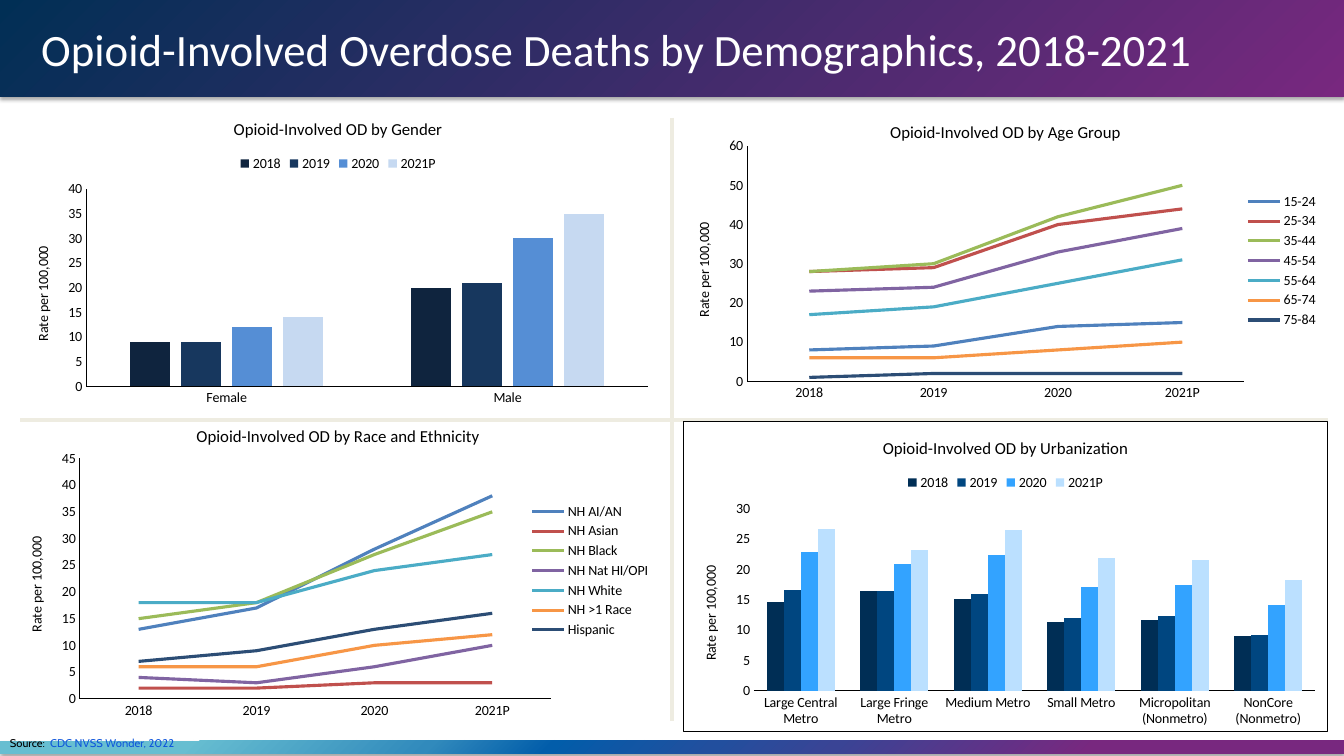
from pptx import Presentation
from pptx.chart.data import CategoryChartData
from pptx.dml.color import RGBColor
from pptx.enum.chart import XL_CHART_TYPE as ChartType, XL_LEGEND_POSITION as LegendSide, XL_TICK_MARK as Tick
from pptx.enum.shapes import MSO_CONNECTOR as Connector, MSO_SHAPE as Preset
from pptx.enum.text import MSO_ANCHOR as Anchor
from pptx.oxml import parse_xml
from pptx.oxml.ns import nsdecls, qn
from pptx.util import Cm, Pt

TITLE = "Opioid-Involved Overdose Deaths by Demographics, 2018-2021"
SOURCE = [("Source:  ", "000000"), ("CDC NVSS Wonder, 2022", "0F56DC")]
AXIS_TITLE = "Rate per 100,000"
YEARS = ["2018", "2019", "2020", "2021P"]
LINE_COLORS = ["4F81BD", "C0504D", "9BBB59", "8064A2", "4BACC6", "F79646", "2C4D75"]
HEADER_STOPS = [(0, "012F55"), (100, "78287F")]
FOOTER_STOPS = [(14, "67BED1"), (32, "318ABC"), (41, "025DAA"),
                (53, "224F9E"), (62, "3A4495"), (81, "78287F")]
DIVIDERS = [(16.94, 2.97, 16.94, 18.16), (33.48, 10.59, 0.51, 10.59)]
LEFT, RIGHT, CHART_WIDTH = 0.38, 17.2, 16.28

CHARTS = [
    dict(title="Opioid-Involved OD by Gender", kind="column",
         left=LEFT, top=2.59, height=7.77, plot=(0.11, 0.28, 0.87, 0.64),
         top_value=40, step=5, gap=219, overlap=-27, framed=False,
         categories=["Female", "Male"],
         colors=["0F243E", "17375E", "558ED5", "C6D9F1"],
         series=dict(zip(YEARS, [(9, 20), (9, 21), (12, 30), (14, 35)]))),
    dict(title="Opioid-Involved OD by Age Group", kind="line",
         left=RIGHT, top=2.67, height=7.8, plot=(0.1, 0.13, 0.77, 0.76),
         top_value=60, step=10, framed=False, categories=YEARS, colors=LINE_COLORS,
         series={"15-24": (8, 9, 14, 15), "25-34": (28, 29, 40, 44),
                 "35-44": (28, 30, 42, 50), "45-54": (23, 24, 33, 39),
                 "55-64": (17, 19, 25, 31), "65-74": (6, 6, 8, 10),
                 "75-84": (1, 2, 2, 2)}),
    dict(title="Opioid-Involved OD by Race and Ethnicity", kind="line",
         left=LEFT, top=10.34, height=8.08, plot=(0.1, 0.15, 0.73, 0.75),
         top_value=45, step=5, framed=False, categories=YEARS, colors=LINE_COLORS,
         series={"NH AI/AN": (13, 17, 28, 38), "NH Asian": (2, 2, 3, 3),
                 "NH Black": (15, 18, 27, 35), "NH Nat HI/OPI": (4, 3, 6, 10),
                 "NH White": (18, 18, 24, 27), "NH >1 Race": (6, 6, 10, 12),
                 "Hispanic": (7, 9, 13, 16)}),
    dict(title="Opioid-Involved OD by Urbanization", kind="column",
         left=RIGHT, top=10.62, height=7.82, plot=(0.11, 0.28, 0.87, 0.59),
         top_value=30, step=5, gap=150, overlap=0, framed=True,
         categories=["Large Central Metro", "Large Fringe Metro", "Medium Metro",
                     "Small Metro", "Micropolitan (Nonmetro)", "NonCore (Nonmetro)"],
         colors=["002E55", "004680", "33A3FF", "BBE0FF"],
         series=dict(zip(YEARS, [(14.6, 16.4, 15.1, 11.3, 11.6, 9),
                                 (16.6, 16.4, 15.9, 12, 12.3, 9.2),
                                 (22.9, 20.9, 22.4, 17.1, 17.5, 14.1),
                                 (26.6, 23.2, 26.5, 21.8, 21.5, 18.2)]))),
]


def color(value):
    return RGBColor.from_string(value)


def style_font(font, size, value="000000", name="Calibri"):
    font.size, font.name, font.bold = Pt(size), name, False
    font.color.rgb = color(value)


def add_band(page, top, height, stops):
    band = page.shapes.add_shape(Preset.RECTANGLE, 0, Cm(top), Cm(33.87), Cm(height))
    band.line.fill.background()
    band.shadow.inherit = False
    band.fill.gradient()
    gradient = band._element.spPr.find(qn("a:gradFill"))
    gradient.find(qn("a:lin")).set("ang", "2700000")
    stop_list = gradient.find(qn("a:gsLst"))
    stop_list.clear()
    for position, value in stops:
        stop_list.append(parse_xml(
            f'<a:gs {nsdecls("a")} pos="{position * 1000}"><a:srgbClr val="{value}"/></a:gs>'))
    band._element.spPr.find(qn("a:effectLst")).append(parse_xml(
        f'<a:outerShdw {nsdecls("a")} blurRad="{Pt(3.1)}" dist="{Pt(1.8)}" dir="5400000" '
        'rotWithShape="0"><a:srgbClr val="000000"><a:alpha val="35000"/></a:srgbClr></a:outerShdw>'))
    return band


def add_divider(page, ends):
    divider = page.shapes.add_connector(Connector.STRAIGHT, *map(Cm, ends))
    divider.line.color.rgb = color("EEECE1")
    divider.line.width = Pt(3)
    divider._element.spPr.append(parse_xml(f'<a:effectLst {nsdecls("a")}/>'))


def add_source(page):
    box = page.shapes.add_textbox(0, Cm(18.42), Cm(18.9), Cm(0.6))
    box.text_frame.word_wrap = True
    para = box.text_frame.paragraphs[0]
    for text, value in SOURCE:
        span = para.add_run()
        span.text = text
        style_font(span.font, 8, value, "Cabin")


def style_axis(axis):
    axis.has_major_gridlines = False
    axis.major_tick_mark = axis.minor_tick_mark = Tick.NONE
    style_font(axis.tick_labels.font, 10)
    axis.format.line.color.rgb = color("000000")
    axis.format.line.width = Pt(0.75)


def set_title(title, text, size):
    title.text_frame.text = text
    style_font(title.text_frame.paragraphs[0].runs[0].font, size)


def place_plot(chart, fractions):
    area = chart._chartSpace.find(".//" + qn("c:plotArea"))
    for layout in area.findall(qn("c:layout")):
        area.remove(layout)
    modes = '<c:layoutTarget val="inner"/><c:xMode val="edge"/><c:yMode val="edge"/>'
    sizes = "".join(f'<c:{key} val="{part}"/>' for key, part in zip("xywh", fractions))
    area.insert(0, parse_xml(f'<c:layout {nsdecls("c")}><c:manualLayout>{modes}{sizes}'
                             '</c:manualLayout></c:layout>'))


def set_frame(chart, framed):
    paint = '<a:solidFill><a:srgbClr val="000000"/></a:solidFill>' if framed else "<a:noFill/>"
    chart._chartSpace.find(qn("c:chart")).addnext(parse_xml(
        f'<c:spPr {nsdecls("c", "a")}><a:noFill/><a:ln w="{Pt(0.75)}">{paint}</a:ln></c:spPr>'))


def add_rate_chart(page, item):
    is_line = item["kind"] == "line"
    data = CategoryChartData()
    data.categories = item["categories"]
    for name, values in item["series"].items():
        data.add_series(name, values)
    chart = page.shapes.add_chart(
        ChartType.LINE if is_line else ChartType.COLUMN_CLUSTERED, Cm(item["left"]),
        Cm(item["top"]), Cm(CHART_WIDTH), Cm(item["height"]), data).chart
    style_font(chart.font, 10)
    chart.has_title = True
    set_title(chart.chart_title, item["title"], 12)
    chart.chart_title.include_in_layout = False
    chart.has_legend = True
    chart.legend.position = LegendSide.RIGHT if is_line else LegendSide.TOP
    chart.legend.include_in_layout = False
    style_font(chart.legend.font, 10)

    style_axis(chart.category_axis)
    rates = chart.value_axis
    style_axis(rates)
    rates.minimum_scale, rates.maximum_scale = 0, item["top_value"]
    rates.major_unit = item["step"]
    set_title(rates.axis_title, AXIS_TITLE, 10)
    rates.axis_title._element.find(".//" + qn("a:bodyPr")).set("rot", "-5400000")
    if item["framed"]:
        rates.format.line.fill.background()

    plot = chart.plots[0]
    plot.vary_by_categories = False
    if not is_line:
        plot.gap_width, plot.overlap = item["gap"], item["overlap"]
    for series, value in zip(plot.series, item["colors"]):
        if is_line:
            series.smooth = False
            series.format.line.color.rgb = color(value)
            series.format.line.width = Pt(2.25)
        else:
            series.format.fill.solid()
            series.format.fill.fore_color.rgb = color(value)
    place_plot(chart, item["plot"])
    set_frame(chart, item["framed"])


def main():
    deck = Presentation()
    deck.slide_width, deck.slide_height = Cm(33.87), Cm(19.05)
    page = deck.slides.add_slide(deck.slide_layouts[6])
    add_band(page, 18.67, 0.33, FOOTER_STOPS)
    header = add_band(page, 0, 2.44, HEADER_STOPS)
    frame = header.text_frame
    frame.text = TITLE
    frame.word_wrap = True
    frame.vertical_anchor = Anchor.MIDDLE
    frame.margin_left = Cm(1.04)
    para = frame.paragraphs[0]
    para.alignment = 1
    style_font(para.runs[0].font, 32, "FFFFFF")
    for ends in DIVIDERS:
        add_divider(page, ends)
    add_source(page)
    for item in CHARTS:
        add_rate_chart(page, item)
    deck.save("out.pptx")


if __name__ == "__main__":
    main()
